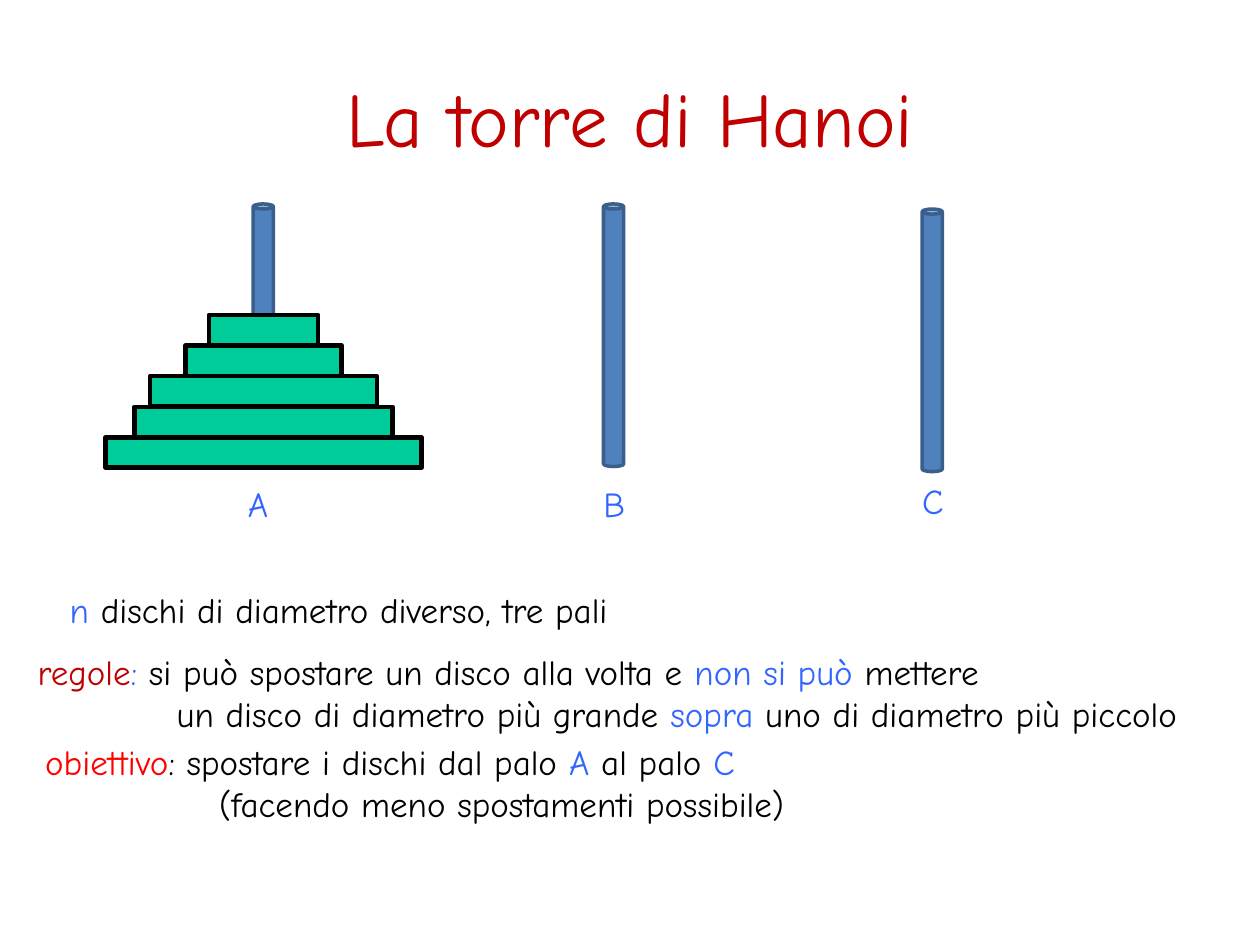
from pptx import Presentation
from pptx.dml.color import RGBColor
from pptx.enum import shapes, text
from pptx.util import Pt

FONT = "Comic Neue"
BLACK = RGBColor(0x00, 0x00, 0x00)
BLUE = RGBColor(0x33, 0x66, 0xFF)
RED = RGBColor(0xFF, 0x00, 0x00)
DARK_RED = RGBColor(0xC0, 0x00, 0x00)
POLE_FILL = RGBColor(0x4F, 0x81, 0xBD)
POLE_LINE = RGBColor(0x3A, 0x5F, 0x8C)
DISC_FILL = RGBColor(0x00, 0xCC, 0x99)

prs = Presentation()
prs.slide_width, prs.slide_height = Pt(720), Pt(540)
s = prs.slides.add_slide(prs.slide_layouts[5])


def add_solid(kind, x, y, w, h, fill, line, line_width):
    sp = s.shapes.add_shape(kind, Pt(x), Pt(y), Pt(w), Pt(h))
    sp.shadow.inherit = False
    sp.fill.solid()
    sp.fill.fore_color.rgb = fill
    sp.line.color.rgb = line
    sp.line.width = Pt(line_width)


def add_text(x, y, w, h, lines, indent=0, align=text.PP_ALIGN.LEFT):
    """Add lines of (text, colour) runs; lines after the first are indented."""
    tf = s.shapes.add_textbox(Pt(x), Pt(y), Pt(w), Pt(h)).text_frame
    tf.word_wrap = True
    for i, line in enumerate(lines):
        p = tf.add_paragraph() if i else tf.paragraphs[0]
        p.alignment = align
        if i:
            p._p.get_or_add_pPr().set("marL", str(Pt(indent)))
        for words, color in line:
            r = p.add_run()
            r.text = words
            r.font.name, r.font.size = FONT, Pt(20)
            r.font.color.rgb = color


title = s.shapes.title
title.left, title.top, title.width, title.height = Pt(36), Pt(21.6), Pt(648), Pt(90)
title.text_frame.text = "La torre di Hanoi"
title.text_frame.vertical_anchor = text.MSO_ANCHOR.MIDDLE
p = title.text_frame.paragraphs[0]
p.alignment = text.PP_ALIGN.CENTER
font = p.runs[0].font
font.name, font.size = FONT, Pt(44)
font.color.rgb = DARK_RED

# Poles with their letters
for name, pole_x, pole_y, label_x, label_y in (
    ("A", 144.7, 116.6, 134.6, 272.2),
    ("B", 344.9, 116.6, 337.7, 272.2),
    ("C", 527, 119.5, 519.8, 270.7),
):
    add_solid(shapes.MSO_SHAPE.CAN, pole_x, pole_y, 11.5, 150,
              POLE_FILL, POLE_LINE, 2)
    add_text(label_x, label_y, 34, 31.5, [[(name, BLUE)]])

# Discs, stacked from the smallest down
DISC_CENTER, DISC_TOP, DISC_STEP = 150.6, 180, 17.5
for i, width in enumerate((62.6, 89.3, 129.6, 147.6, 180.7)):
    add_solid(shapes.MSO_SHAPE.RECTANGLE, DISC_CENTER - width / 2,
              DISC_TOP + i * DISC_STEP, width, 17.3, DISC_FILL, BLACK, 2.5)

add_text(15.8, 332.6, 355.7, 31.5,
         [[("n ", BLUE), ("dischi di diametro diverso, tre pali", BLACK)]],
         align=text.PP_ALIGN.CENTER)
add_text(14.4, 368, 700, 55.5, [
    [("regole", DARK_RED), (": ", BLUE),
     ("si può spostare un disco alla volta e ", BLACK),
     ("non si può ", BLUE), ("mettere", BLACK)],
    [("un disco di diametro più grande ", BLACK), ("sopra ", BLUE),
     ("uno di diametro più piccolo", BLACK)],
], indent=79.5)
add_text(18.7, 419.8, 460, 55.5, [
    [("obiettivo", RED), (": spostare i dischi dal palo ", BLACK), ("A", BLUE),
     (" al palo ", BLACK), ("C", BLUE)],
    [("(facendo meno spostamenti possibile)", BLACK)],
], indent=99.5)

prs.save("out.pptx")
